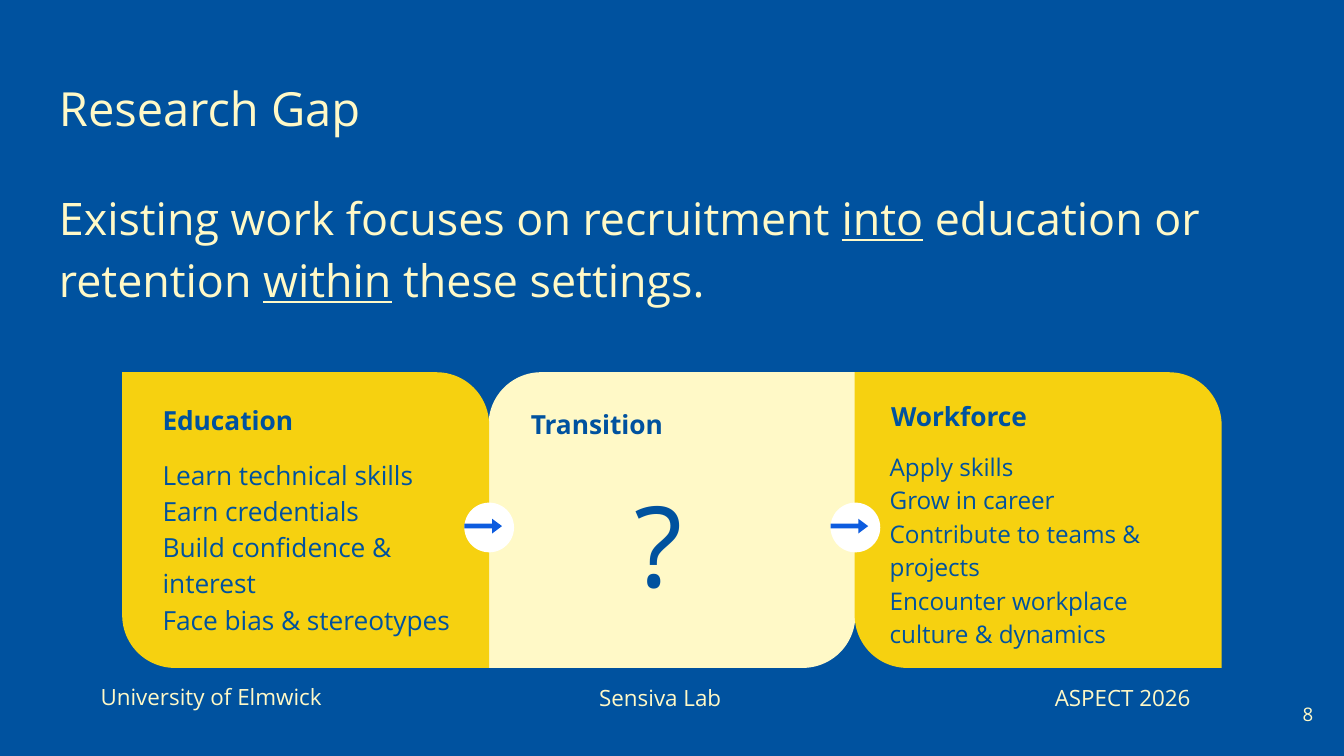
from dataclasses import dataclass

from pptx import Presentation
from pptx.dml.color import RGBColor
from pptx.enum.shapes import MSO_SHAPE
from pptx.enum.text import MSO_ANCHOR, PP_ALIGN
from pptx.util import Inches, Pt


@dataclass(frozen=True)
class Theme:
    font: str = "Open Sans"
    blue: str = "00529F"
    cream: str = "FFF9C7"
    gold: str = "F6D110"
    white: str = "FFFFFF"
    arrow: str = "0D5CDF"
    title: float = 25.2
    body: float = 24
    card: float = 14.1
    compact: float = 13
    question: float = 60
    footer: float = 12
    number: float = 10


def write(frame, paragraphs, *, font, size, color, bold=False, spacing=1.0,
          after=0, align=PP_ALIGN.LEFT, underlined=()):
    for index, runs in enumerate(paragraphs):
        paragraph = frame.paragraphs[0] if index == 0 else frame.add_paragraph()
        paragraph.alignment = align
        paragraph.line_spacing = spacing
        paragraph.space_after = Pt(after)
        for words in runs:
            run = paragraph.add_run()
            run.text = words
            run.font.name = font
            run.font.size = Pt(size)
            run.font.bold = bold
            run.font.underline = words in underlined
            run.font.color.rgb = RGBColor.from_string(color)


class GapSlide:
    """Draws the elements of the research gap slide in one theme."""

    def __init__(self, slide, theme):
        self.slide = slide
        self.theme = theme
        slide.background.fill.solid()
        slide.background.fill.fore_color.rgb = RGBColor.from_string(theme.blue)

    def text(self, box, paragraphs, *, inset=0.1, anchor=MSO_ANCHOR.TOP, **style):
        frame = self.slide.shapes.add_textbox(*map(Inches, box)).text_frame
        frame.word_wrap = True
        frame.vertical_anchor = anchor
        frame.margin_left = frame.margin_right = Inches(inset)
        frame.margin_top = frame.margin_bottom = Inches(inset)
        write(frame, paragraphs, **{"font": self.theme.font,
                                    "color": self.theme.cream, **style})

    def shape(self, kind, box, color, adjustments=()):
        shape = self.slide.shapes.add_shape(kind, *map(Inches, box))
        shape.shadow.inherit = False
        shape.fill.solid()
        shape.fill.fore_color.rgb = RGBColor.from_string(color)
        shape.line.fill.background()
        for index, value in enumerate(adjustments):
            shape.adjustments[index] = value

    def card(self, left, color, corners, heading, heading_box):
        self.shape(MSO_SHAPE.ROUND_2_DIAG_RECTANGLE, (left, 2.77, 2.73, 2.2),
                   color, corners)
        self.card_text(heading_box, [[heading]], size=self.theme.card, bold=True)

    def card_text(self, box, paragraphs, **style):
        self.text(box, paragraphs, inset=0.13, color=self.theme.blue, **style)

    def step(self, left):
        self.shape(MSO_SHAPE.OVAL, (left, 3.74, 0.37, 0.37), self.theme.white)
        self.shape(MSO_SHAPE.RIGHT_ARROW, (left, 3.86, 0.28, 0.11),
                   self.theme.arrow, (0.32, 0.67))


def main():
    deck = Presentation()
    deck.slide_width = Inches(10)
    deck.slide_height = deck.slide_width * 9 // 16
    theme = Theme()
    gap = GapSlide(deck.slides.add_slide(deck.slide_layouts[6]), theme)

    gap.text((0.34, 0.49, 9.32, 0.63), [["Research Gap"]], size=theme.title,
             anchor=MSO_ANCHOR.MIDDLE)
    gap.text((0.34, 1.26, 9.02, 0.9),
             [["Existing work focuses on recruitment ", "into",
               " education or retention ", "within", " these settings."]],
             size=theme.body, spacing=1.15, after=12, underlined=("into", "within"))

    for box, label in (((0.65, 4.98, 2.05, 0.43), "University of Elmwick"),
                       ((4.36, 4.99, 1.28, 0.4), "Sensiva Lab"),
                       ((7.75, 4.99, 1.37, 0.4), "ASPECT 2026")):
        gap.text(box, [[label]], size=theme.footer)
    gap.text((9.27, 5.1, 0.6, 0.43), [["8"]], size=theme.number,
             anchor=MSO_ANCHOR.MIDDLE, align=PP_ALIGN.RIGHT)

    first, last = 0.91, 6.36
    lefts = [first, (first + last) / 2, last]
    outer, inner = (0, 0.178), (0.178, 0)
    gap.card(lefts[1], theme.cream, inner, "Transition", (3.82, 2.92, 2.04, 0.43))
    gap.card_text((4.59, 3.26, 0.84, 1.22), [["?"]], size=theme.question,
                  spacing=1.15, after=20.5)

    gap.card(lefts[0], theme.gold, outer, "Education", (1.08, 2.89, 2.04, 0.37))
    gap.card_text((1.08, 3.25, 2.55, 1.48),
                  [["Learn technical skills"], ["Earn credentials"],
                   ["Build confidence & interest"], ["Face bias & stereotypes"]],
                  size=theme.card, spacing=1.15)

    gap.card(lefts[2], theme.gold, outer, "Workforce", (6.5, 2.86, 1.51, 0.43))
    gap.card_text((6.49, 3.2, 2.54, 1.5),
                  [["Apply skills"], ["Grow in career"],
                   ["Contribute to teams & projects"],
                   ["Encounter workplace culture & dynamics"]],
                  size=theme.compact, spacing=1.15)

    for seam in reversed(lefts[1:]):
        gap.step(seam - 0.18)

    deck.save("out.pptx")


if __name__ == "__main__":
    main()
